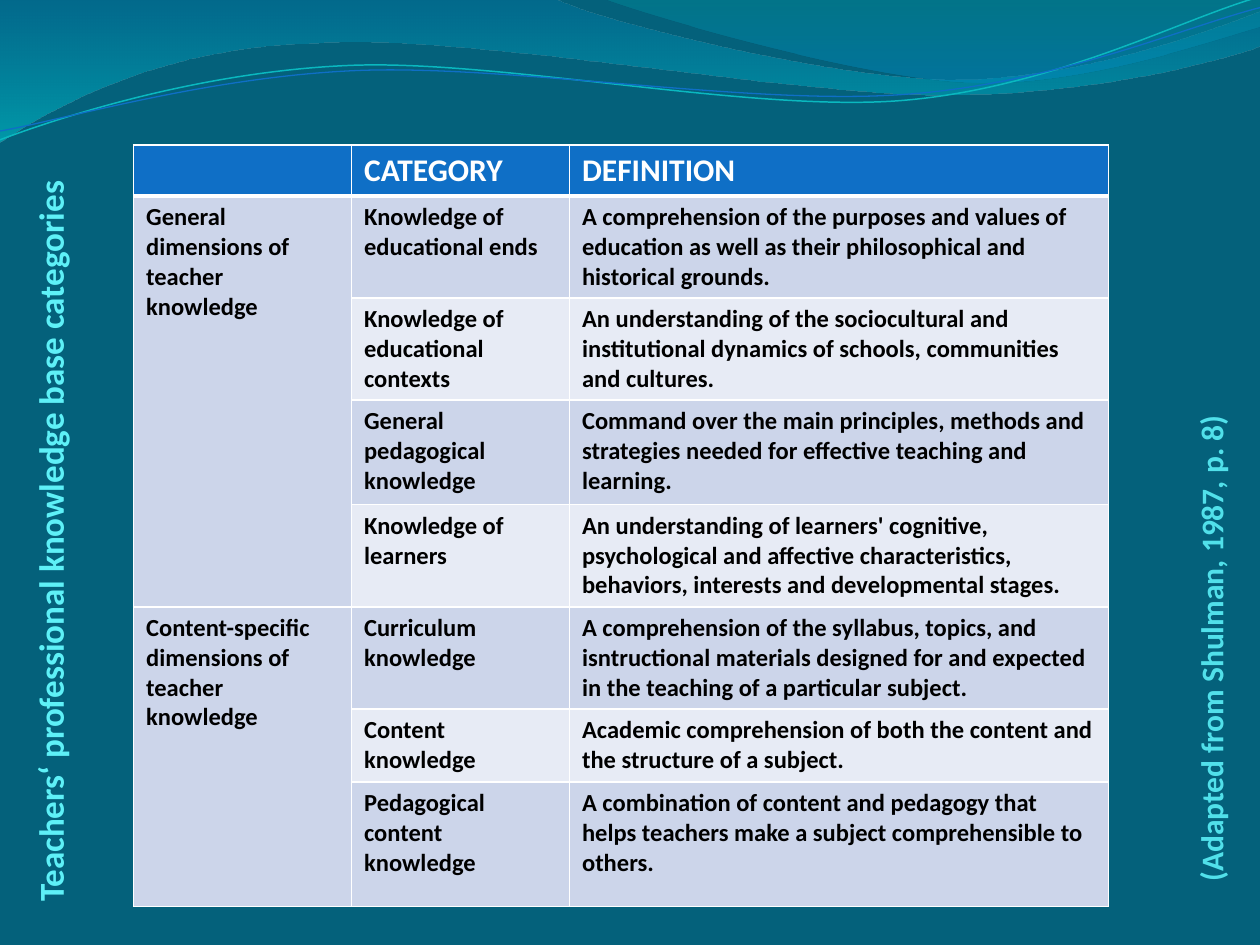
import math

from lxml import etree
from pptx import Presentation
from pptx import util as u
from pptx.dml import color
from pptx.enum import text
from pptx.oxml import ns

FONT = "Calibri"
BANDS = ["CCD5EA", "E7EBF5"]
HEADER = "0F6FC6"
COLUMN_WIDTHS = [1.73, 1.73, 4.28]
ROW_HEIGHTS = [0.4, 0.77, 0.79, 0.83, 0.77, 0.77, 0.58, 0.99]

GROUPS = [
    ("General dimensions of teacher knowledge", [
        ("Knowledge of educational ends",
         "A comprehension of the purposes and values of education as well as "
         "their philosophical and historical grounds."),
        ("Knowledge of educational contexts",
         "An understanding of the sociocultural and institutional dynamics of "
         "schools, communities and cultures."),
        ("General pedagogical knowledge",
         "Command over the main principles, methods and strategies needed for "
         "effective teaching and learning."),
        ("Knowledge of learners",
         "An understanding of learners' cognitive, psychological and affective "
         "characteristics, behaviors, interests and developmental stages."),
    ]),
    ("Content-specific dimensions of teacher knowledge", [
        ("Curriculum knowledge",
         "A comprehension of the syllabus, topics, and isntructional materials "
         "designed for and expected in the teaching of a particular subject."),
        ("Content knowledge",
         "Academic comprehension of both the content and the structure of a subject."),
        ("Pedagogical content knowledge",
         "A combination of content and pedagogy that helps teachers make a "
         "subject comprehensible to others."),
    ]),
]

# Each wave has a box and an outline: a start point, then line ends
# (2 numbers) and Bezier curves (6 numbers)
FILLED_WAVES = [
    ((-0.01, -0.01, 10.02, 1.14),
     [(0, 0), (4.4, -0.01), (4.76, 0.17, 6.64, 0.63, 7.58, 0.63),
      (8.53, 0.63, 9.58, 0.26, 10, 0.09), (10.01, 0.36),
      (9.83, 0.44, 8.7, 0.76, 7.46, 0.75), (6.22, 0.75, 3.82, 0.28, 2.57, 0.34),
      (1.29, 0.36, 0.46, 0.83, -0.01, 1.13), (0, 0)],
     [(0, "0074A1", 45), (1, "00C6CF", 55)]),
    ((4.79, -0.01, 5.21, 0.7),
     [(4.79, -0.01), (5.09, 0.11, 6.82, 0.62, 7.69, 0.65),
      (8.56, 0.69, 9.61, 0.32, 10, 0.21), (10, 0), (4.79, -0.01)],
     [(0, "00A1A9", 30), (0.8, "008BBF", 45)]),
]
LINE_TILT = 357.3
LINE_WAVES = [
    ((-0.02, 0.22, 10.02, 0.71),
     [(0, 1.11), (0.48, 0.93, 1.58, 0.57, 2.77, 0.52),
      (3.95, 0.47, 5.93, 0.89, 7.13, 0.8), (8.33, 0.71, 9.38, 0.15, 9.98, -0.02)],
     "0AB8BF", 0.85),
    ((-0.02, 0.3, 10.03, 0.58),
     [(0, 1.04), (0.47, 0.96, 1.64, 0.61, 2.83, 0.56),
      (4.03, 0.51, 5.97, 0.84, 7.17, 0.75), (8.36, 0.67, 9.41, 0.21, 10, 0.06)],
     "0F6FC6", 0.75),
]


def rgb(value):
    return color.RGBColor.from_string(value)


def write(frame, content, size=14, fill="000000", align=text.PP_ALIGN.LEFT,
          anchor=text.MSO_ANCHOR.TOP):
    frame.word_wrap = True
    frame.vertical_anchor = anchor
    paragraph = frame.paragraphs[0]
    paragraph.alignment = align
    run = paragraph.add_run()
    run.text = content
    run.font.name, run.font.size, run.font.bold = FONT, u.Pt(size), True
    run.font.color.rgb = rgb(fill)


def place(shape, left, top, width, height):
    shape.left, shape.top = u.Inches(left), u.Inches(top)
    shape.width, shape.height = u.Inches(width), u.Inches(height)


def add_wave(slide, box, outline, close=False, tilt=0):
    """Add a freeform whose segments after the first point may be curves."""
    left, top, width, height = box
    middle_x, middle_y = left + width / 2, top + height / 2
    cosine, sine = math.cos(math.radians(-tilt)), math.sin(math.radians(-tilt))

    def local(x, y):
        """Undo the tilt and measure from the corner of the box."""
        x, y = x - middle_x, y - middle_y
        return (u.Inches(x * cosine - y * sine + width / 2),
                u.Inches(x * sine + y * cosine + height / 2))

    points = [[local(*part[i:i + 2]) for i in range(0, len(part), 2)]
              for part in outline]
    builder = slide.shapes.build_freeform(*points[0][0])
    builder.add_line_segments([part[-1] for part in points[1:]], close=close)
    shape = builder.convert_to_shape()
    place(shape, *box)
    shape.rotation = tilt
    shape.shadow.inherit = False

    # Put the curves in, in coordinates of the box
    track = next(shape.element.spPr.iter(ns.qn("a:path")))
    track.set("w", str(u.Inches(width)))
    track.set("h", str(u.Inches(height)))
    for segment, part in zip(list(track), points):
        if len(part) == 3:
            segment.tag = ns.qn("a:cubicBezTo")
        for old in list(segment):
            segment.remove(old)
        for x, y in part:
            etree.SubElement(segment, ns.qn("a:pt"), x=str(x), y=str(y))
    return shape


def add_waves(slide):
    for box, outline, stops in FILLED_WAVES:
        shape = add_wave(slide, box, outline, close=True)
        shape.line.fill.background()
        shape.fill.gradient()
        shape.fill.gradient_angle = 270
        for stop, (position, value, _) in zip(shape.fill.gradient_stops, stops):
            stop.position = position
            stop.color.rgb = rgb(value)
        # Transparency of each gradient stop
        colors = list(shape.element.spPr.iter(ns.qn("a:srgbClr")))
        for element, (_, _, opacity) in zip(colors, stops):
            etree.SubElement(element, ns.qn("a:alpha"), val=str(opacity * 1000))
    for box, outline, value, width in LINE_WAVES:
        shape = add_wave(slide, box, outline, tilt=LINE_TILT)
        shape.fill.background()
        shape.line.color.rgb = rgb(value)
        shape.line.width = u.Pt(width)


def format_cell(cell, fill, bottom=1):
    cell.fill.solid()
    cell.fill.fore_color.rgb = rgb(fill)
    properties = cell._tc.get_or_add_tcPr()
    for index, side in enumerate("LRTB"):
        width = bottom if side == "B" else 1
        line = etree.Element(ns.qn(f"a:ln{side}"), w=str(u.Pt(width)))
        solid = etree.SubElement(line, ns.qn("a:solidFill"))
        etree.SubElement(solid, ns.qn("a:srgbClr"), val="FFFFFF")
        properties.insert(index, line)


def add_category_table(slide, *box):
    table = slide.shapes.add_table(
        len(ROW_HEIGHTS), len(COLUMN_WIDTHS), *map(u.Inches, box)).table
    table.horz_banding = False
    for column, size in zip(table.columns, COLUMN_WIDTHS):
        column.width = u.Inches(size)
    for row, size in zip(table.rows, ROW_HEIGHTS):
        row.height = u.Inches(size)

    # Header
    for cell, label in zip(table.rows[0].cells, ["", "CATEGORY", "DEFINITION"]):
        format_cell(cell, HEADER, bottom=3)
        if label:
            write(cell.text_frame, label, size=18, fill="FFFFFF")

    # Groups of categories, banded row by row
    row = 1
    for group, entries in GROUPS:
        first = table.cell(row, 0)
        first.merge(table.cell(row + len(entries) - 1, 0))
        write(first.text_frame, group)
        for entry in entries:
            format_cell(table.cell(row, 0), BANDS[0])
            for column, content in enumerate(entry, start=1):
                cell = table.cell(row, column)
                format_cell(cell, BANDS[(row - 1) % 2])
                write(cell.text_frame, content)
            row += 1


def add_side_title(slide, *box):
    title = slide.shapes.title
    place(title, *box)
    title.rotation = 270
    write(title.text_frame, "Teachers‘ professional knowledge base categories ",
          size=20, fill="5EF0F7", align=text.PP_ALIGN.CENTER,
          anchor=text.MSO_ANCHOR.MIDDLE)


def add_source_note(slide, *box):
    note = slide.shapes.add_textbox(*map(u.Inches, box))
    note.rotation = 270
    write(note.text_frame, "(Adapted from Shulman, 1987, p. 8)",
          size=18, fill="51E0EA", align=text.PP_ALIGN.RIGHT)
    note.text_frame.auto_size = text.MSO_AUTO_SIZE.SHAPE_TO_FIT_TEXT


def main():
    presentation = Presentation()
    presentation.slide_width, presentation.slide_height = u.Inches(10), u.Inches(7.5)
    slide = presentation.slides.add_slide(presentation.slide_layouts[5])
    slide.background.fill.solid()
    slide.background.fill.fore_color.rgb = rgb("04617B")
    add_waves(slide)
    add_category_table(slide, 1.06, 1.15, 7.74, 6.01)
    add_source_note(slide, 7.64, 4.97, 3.94, 0.4)
    add_side_title(slide, -2.95, 3.99, 6.69, 0.55)
    presentation.save("out.pptx")


if __name__ == "__main__":
    main()
